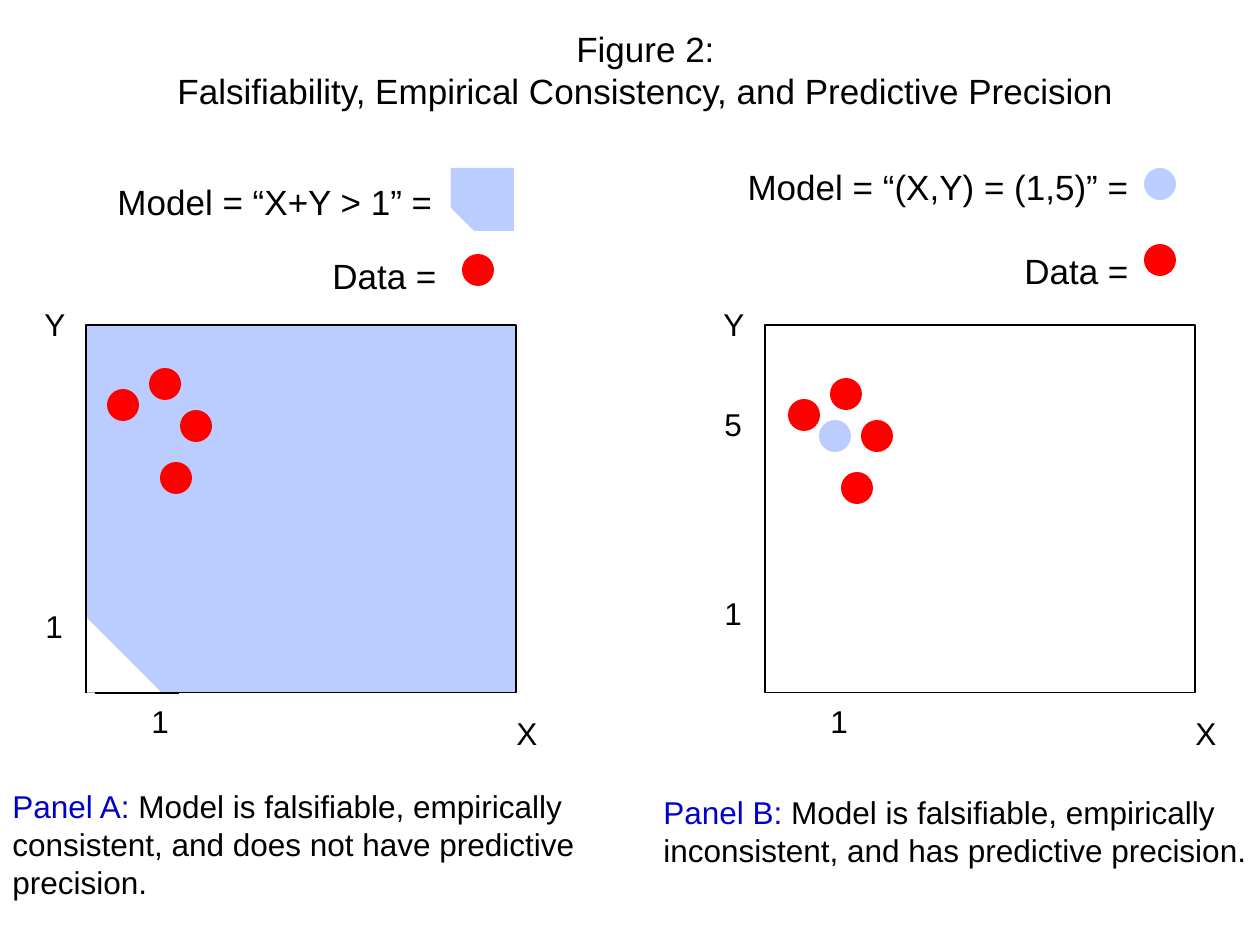
from lxml import etree
from pptx import Presentation
from pptx.dml.color import RGBColor
from pptx.enum.shapes import MSO_CONNECTOR, MSO_SHAPE
from pptx.enum.text import MSO_ANCHOR, MSO_AUTO_SIZE, PP_ALIGN
from pptx.oxml.ns import qn
from pptx.util import Emu, Pt

RECT, DOT, WEDGE = MSO_SHAPE.RECTANGLE, MSO_SHAPE.OVAL, MSO_SHAPE.RIGHT_TRIANGLE
LEFT, MID, RIGHT = PP_ALIGN.LEFT, PP_ALIGN.CENTER, PP_ALIGN.RIGHT
STRAIGHT = MSO_CONNECTOR.STRAIGHT
COLORS = {"black": "000000", "white": "FFFFFF", "model": "3366FF",
          "data": "FF0000", "panel": "0000CC"}
SCALE = 914400 // 126  # EMU per px
FONT = "Arial"
SIZE = 32              # dot diameter
PLOT = (430, 368)      # plot width and height
TOP = 325              # plot top

# Content: positions in px
TITLE = ["Figure 2:", "Falsifiability, Empirical Consistency, and Predictive Precision"]
LEGEND = [  # lines, box, alignment
    (["Model = “X+Y > 1” ="], (105, 174, 345, 52), LEFT),
    (["Data ="], (300, 248, 149, 52), RIGHT),
    (["Model = “(X,Y) = (1,5)” =", "Data ="], (730, 159, 411, 139), RIGHT),
]
PANELS = [
    {"x": 86, "fill": "model", "cloud": (107, 368), "ticks": [("1", 601)],
     "head": "Panel A: ", "box": (0, 781, 609, 164),
     "note": "Model is falsifiable, empirically consistent, "
             "and does not have predictive precision."},
    {"x": 765, "fill": "white", "cloud": (788, 378), "ticks": [("1", 588), ("5", 399)],
     "head": "Panel B: ", "box": (651, 787, 609, 126),
     "note": "Model is falsifiable, empirically inconsistent, "
             "and has predictive precision."},
]
CLOUD = [(42, 0), (53, 94), (73, 42), (0, 21)]    # dots within a data cloud
LABELS = [("X", 418, 708), ("Y", -54, 299), ("1", 53, 696)]
KEYS = [  # shape, box, fill, alpha
    (RECT, (451, 168, 63, 63), "model", 33),
    (DOT, (462, 254, SIZE, SIZE), "data", None),
    (DOT, (1144, 168, SIZE, SIZE), "model", 33),
    (DOT, (1144, 244, SIZE, SIZE), "data", None),
    (DOT, (819, 420, SIZE, SIZE), "model", 33),
]
CUTS = [(87, 619, 73, 73), (431, 189, 53, 53)]    # white corners
AXES = [(86, 599, 86, 693), (95, 693, 179, 693)]


def px(*nums):
    return [Emu(n * SCALE) for n in nums]


def rgb(name):
    return RGBColor.from_string(COLORS[name])


def write(lines, box, size=20, align=LEFT, wrap=True, gap=0, shape=None):
    """Each line is a string or a list of (text, colour) runs."""
    if shape is None:
        shape = slide.shapes.add_textbox(*px(*box))
    shape.left, shape.top, shape.width, shape.height = px(*box)
    frame = shape.text_frame
    frame.word_wrap = wrap
    frame.auto_size = MSO_AUTO_SIZE.NONE
    frame.vertical_anchor = MSO_ANCHOR.TOP
    for i, line in enumerate(lines):
        para = frame.add_paragraph() if i else frame.paragraphs[0]
        para.alignment = align
        para.space_before = Pt(gap if i else 0)
        for text, color in [(line, "black")] if isinstance(line, str) else line:
            run = para.add_run()
            run.text = text
            run.font.name, run.font.size = FONT, Pt(size)
            run.font.color.rgb = rgb(color)


def draw(kind, box, fill, alpha=None, line=None, home=None):
    shape = (home or slide).shapes.add_shape(kind, *px(*box))
    shape.shadow.inherit = False
    shape.fill.solid()
    shape.fill.fore_color.rgb = rgb(fill)
    if alpha:
        tone = shape.fill._xPr.find(".//" + qn("a:srgbClr"))
        etree.SubElement(tone, qn("a:alpha")).set("val", str(alpha * 1000))
    if line:
        shape.line.color.rgb = rgb(line)
        shape.line.width = Pt(0.75)
    else:
        shape.line.fill.background()


deck = Presentation()
deck.slide_width, deck.slide_height = px(1260, 945)
slide = deck.slides.add_slide(deck.slide_layouts[5])

# Title and legend text
write(TITLE, (158, 21, 975, 97), align=MID, shape=slide.shapes.title)
for lines, box, align in LEGEND:
    write(lines, box, align=align, gap=24)

# Plots with labels and captions
for panel in PANELS:
    x = panel["x"]
    draw(RECT, (x, TOP, *PLOT), panel["fill"], alpha=33, line="black")
    ticks = [(text, -53, y) for text, y in panel["ticks"]]
    for text, dx, y in LABELS + ticks:
        write([text], (x + dx, y, 46, 50), size=18, wrap=False)
    write([[(panel["head"], "panel"), (panel["note"], "black")]], panel["box"], size=18)

# Legend keys, white corners and axis ends
for kind, box, fill, alpha in KEYS:
    draw(kind, box, fill, alpha=alpha)
for box in CUTS:
    draw(WEDGE, box, "white", line="white")
for ends in AXES:
    axis = slide.shapes.add_connector(STRAIGHT, *px(*ends))
    axis.line.color.rgb = rgb("black")
    axis.line.width = Pt(0.75)
    etree.SubElement(axis._element.spPr, qn("a:effectLst"))

# Data clouds
for panel in PANELS:
    group = slide.shapes.add_group_shape()
    left, top = panel["cloud"]
    for dx, dy in CLOUD:
        draw(DOT, (left + dx, top + dy, SIZE, SIZE), "data", home=group)

deck.save("out.pptx")
